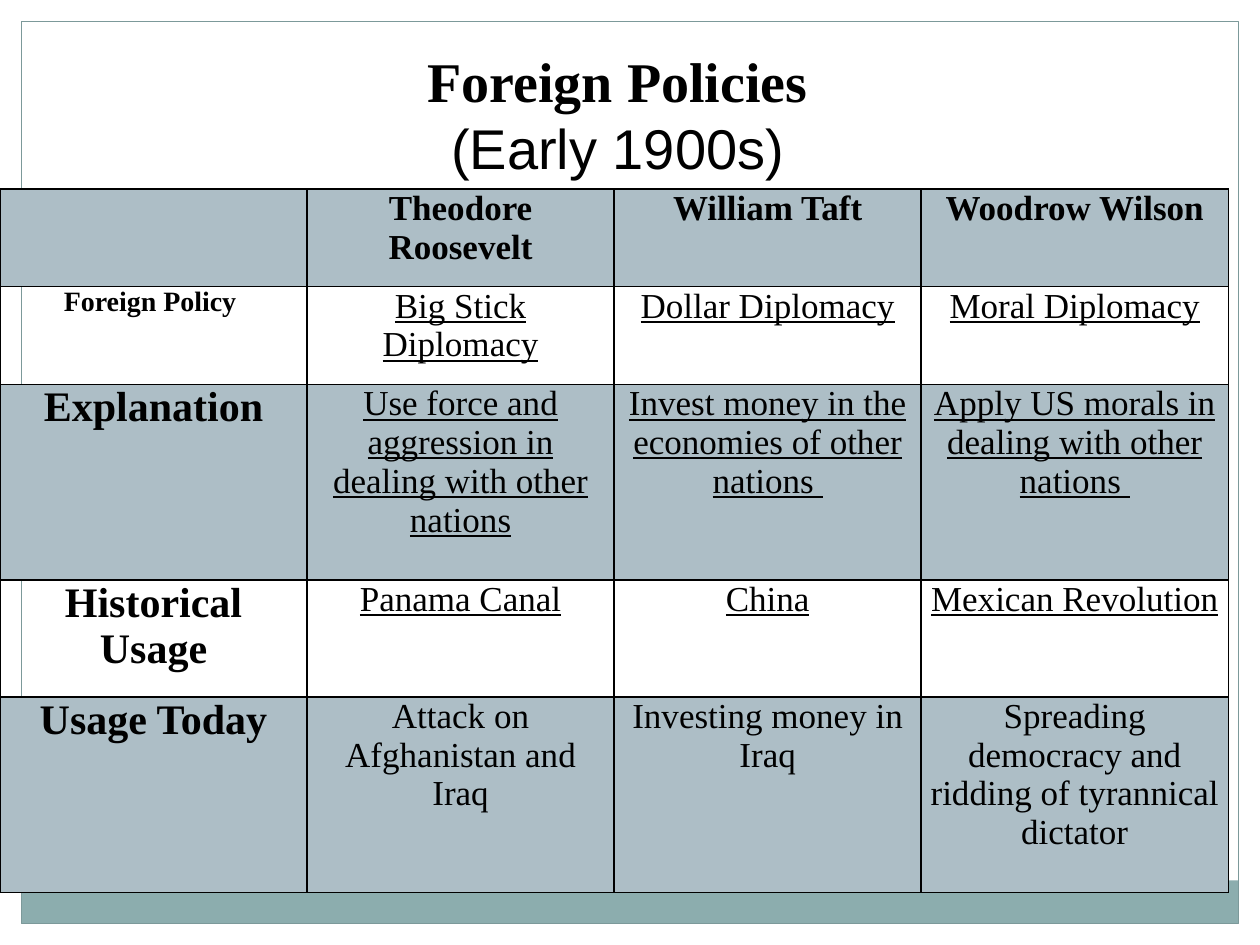
from lxml import etree
from pptx import Presentation
from pptx.dml.color import RGBColor
from pptx.enum.shapes import MSO_SHAPE
from pptx.enum.text import MSO_ANCHOR, PP_ALIGN
from pptx.oxml.ns import qn
from pptx.util import Cm, Pt

RECT = MSO_SHAPE.RECTANGLE
CENTER = PP_ALIGN.CENTER
TOP = MSO_ANCHOR.TOP

THEME = {
    "ink": "000000", "paper": "FFFFFF", "band": "ADBEC6",
    "footer": "8CADAE", "frame": "7C999A",
    "serif": "Times New Roman", "sans": "Arial",
    "title": 32, "heading": 24, "body": 20, "small": 16,
}

TITLE = "Foreign Policies"
PERIOD = "(Early 1900s)"
PRESIDENTS = ["", "Theodore Roosevelt", "William Taft", "Woodrow Wilson"]
ROWS = [
    ["Foreign Policy ", "Big Stick Diplomacy", "Dollar Diplomacy", "Moral Diplomacy"],
    ["Explanation", "Use force and aggression in dealing with other nations",
     "Invest money in the economies of other nations ",
     "Apply US morals in dealing with other nations "],
    ["Historical Usage", "Panama Canal", "China", "Mexican Revolution"],
    ["Usage Today", "Attack on Afghanistan and Iraq", "Investing money in Iraq",
     "Spreading democracy and ridding of tyrannical dictator"],
]
ROW_HEIGHTS = [1.97, 1.97, 3.94, 2.36, 3.94]
COLUMN_WIDTH = 6.19
TABLE_TOP = 3.81
SLIDE_W, SLIDE_H, MARGIN = 25.4, 19.05, 0.43


def rgb(name):
    return RGBColor.from_string(THEME[name])


def write(p, text, size="body", font="serif", bold=False, underline=False):
    p.alignment = CENTER
    r = p.add_run()
    r.text = text
    r.font.name = THEME[font]
    r.font.size = Pt(THEME[size])
    r.font.bold = bold
    r.font.underline = underline
    r.font.color.rgb = rgb("ink")


def add_rect(s, left, top, width, height, fill=None, line=None):
    sp = s.shapes.add_shape(RECT, Cm(left), Cm(top), Cm(width), Cm(height))
    sp.shadow.inherit = False
    if fill:
        sp.fill.solid()
        sp.fill.fore_color.rgb = rgb(fill)
    else:
        sp.fill.background()
    if line:
        sp.line.color.rgb = rgb(line)
        sp.line.width = Pt(0.75)
    else:
        sp.line.fill.background()


def style_cell(cell, banded):
    cell.margin_left = cell.margin_right = Cm(0.18)
    cell.margin_top = cell.margin_bottom = 0
    cell.vertical_anchor = TOP
    tc_pr = cell._tc.get_or_add_tcPr()
    for side in ("a:lnL", "a:lnR", "a:lnT", "a:lnB"):
        ln = etree.SubElement(tc_pr, qn(side), w=str(Pt(1)))
        fill = etree.SubElement(ln, qn("a:solidFill"))
        etree.SubElement(fill, qn("a:srgbClr"), val=THEME["ink"])
    if banded:
        cell.fill.solid()
        cell.fill.fore_color.rgb = rgb("band")
    else:
        cell.fill.background()


def add_policy_table(s):
    content = [PRESIDENTS] + ROWS
    last = len(content) - 1
    columns = len(PRESIDENTS)
    table = s.shapes.add_table(
        len(content), columns, 0, Cm(TABLE_TOP),
        Cm(COLUMN_WIDTH * columns), Cm(sum(ROW_HEIGHTS))).table
    for column in table.columns:
        column.width = Cm(COLUMN_WIDTH)
    for i, texts in enumerate(content):
        table.rows[i].height = Cm(ROW_HEIGHTS[i])
        for j, text in enumerate(texts):
            cell = table.cell(i, j)
            style_cell(cell, banded=i % 2 == 0)
            if not text:
                continue
            size = "body" if j else "small" if i == 1 else "heading"
            write(cell.text_frame.paragraphs[0], text, size=size,
                  bold=i == 0 or j == 0, underline=j > 0 and 0 < i < last)


def add_title(s):
    tf = s.shapes.add_textbox(Cm(4.24), Cm(0.84), Cm(16.43), Cm(3.5)).text_frame
    tf.word_wrap = True
    tf.vertical_anchor = TOP
    tf.margin_left = tf.margin_right = tf.margin_bottom = 0
    tf.margin_top = Cm(0.1)
    write(tf.paragraphs[0], TITLE, size="title", bold=True)
    write(tf.add_paragraph(), PERIOD, size="title", font="sans")


def main():
    prs = Presentation()
    prs.slide_width, prs.slide_height = Cm(SLIDE_W), Cm(SLIDE_H)
    s = prs.slides.add_slide(prs.slide_layouts[6])
    inner_w, inner_h = SLIDE_W - 2 * MARGIN, SLIDE_H - 2 * MARGIN
    footer_h = 0.87
    add_rect(s, 0, 0, SLIDE_W, MARGIN, fill="paper")
    for left in (SLIDE_W - MARGIN, 0):
        add_rect(s, left, 0, MARGIN, SLIDE_H, fill="paper")
    add_rect(s, MARGIN, SLIDE_H - MARGIN - footer_h, inner_w, footer_h, fill="footer")
    add_rect(s, MARGIN, MARGIN, inner_w, inner_h, line="frame")
    add_policy_table(s)
    add_title(s)
    prs.save("out.pptx")


if __name__ == "__main__":
    main()
